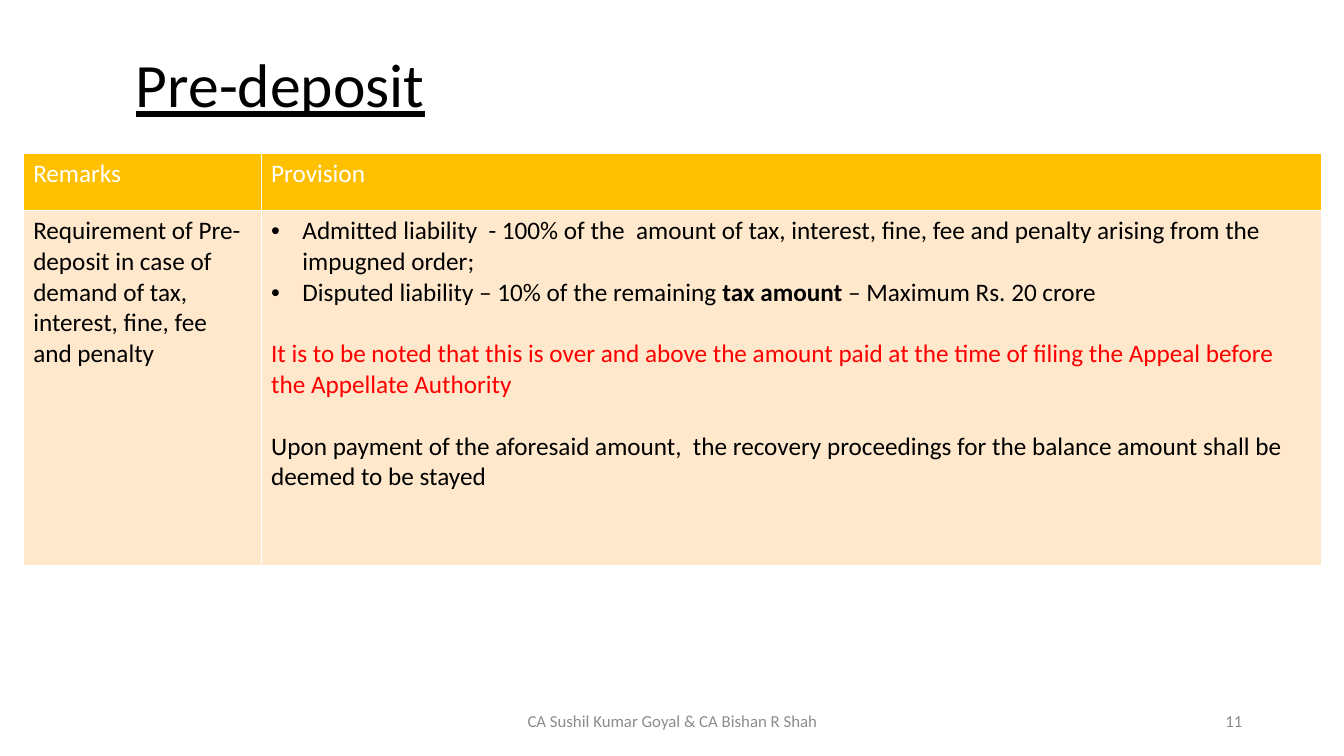
from lxml import etree
from pptx import Presentation
from pptx.dml.color import RGBColor
from pptx.enum.text import MSO_ANCHOR, PP_ALIGN
from pptx.oxml.ns import qn
from pptx.util import Inches, Pt

MIDDLE = MSO_ANCHOR.MIDDLE
LEFT, CENTER, RIGHT = PP_ALIGN.LEFT, PP_ALIGN.CENTER, PP_ALIGN.RIGHT

BLACK, WHITE, RED, GRAY = "000000", "FFFFFF", "FF0000", "8C8C8C"
AMBER, CREAM = "FFC000", "FFE8CC"
BLANK_LINE = 22  # points, one line of 18 pt text


def rgb(value):
    return RGBColor.from_string(value)


class SlideBuilder:
    font = "Calibri"
    body_size = 18

    def __init__(self, slide):
        self.s = slide

    def style(self, p, size, color):
        p.font.name = self.font
        p.font.size = Pt(size)
        p.font.color.rgb = rgb(color)

    def text(self, box, text, size, color, align=LEFT):
        tf = self.s.shapes.add_textbox(*map(Inches, box)).text_frame
        tf.word_wrap = True
        tf.vertical_anchor = MIDDLE
        p = tf.paragraphs[0]
        p.text = text
        p.alignment = align
        self.style(p, size, color)
        return p

    def table(self, box, widths, heights):
        shape = self.s.shapes.add_table(len(heights), len(widths), *map(Inches, box))
        table = shape.table
        for column, width in zip(table.columns, widths):
            column.width = Inches(width)
        for row, height in zip(table.rows, heights):
            row.height = Inches(height)
        return table

    def cell(self, cell, fill, paragraphs):
        self.borders(cell, WHITE, 1)
        cell.fill.solid()
        cell.fill.fore_color.rgb = rgb(fill)
        tf = cell.text_frame
        for i, (runs, color, bullet, before) in enumerate(paragraphs):
            p = tf.add_paragraph() if i else tf.paragraphs[0]
            self.style(p, self.body_size, color)
            p.space_before = Pt(before)
            for text, bold in runs:
                r = p.add_run()
                r.text = text
                r.font.bold = bold
            if bullet:
                self.bullet(p)

    def borders(self, cell, color, width):
        tcPr = cell._tc.get_or_add_tcPr()
        for side in ("lnL", "lnR", "lnT", "lnB"):
            ln = etree.SubElement(tcPr, qn("a:" + side), w=str(Pt(width)))
            fill = etree.SubElement(ln, qn("a:solidFill"))
            etree.SubElement(fill, qn("a:srgbClr"), val=color)

    def bullet(self, p):
        pPr = p._p.get_or_add_pPr()
        indent = Inches(0.31)
        pPr.set("marL", str(indent))
        pPr.set("indent", str(-indent))
        font = etree.Element(qn("a:buFont"), typeface="Arial")
        char = etree.Element(qn("a:buChar"), char="•")
        pPr.find(qn("a:defRPr")).addprevious(font)
        font.addnext(char)


def plain(text, color=BLACK, before=0):
    return [(text, False)], color, False, before


def main():
    prs = Presentation()
    prs.slide_width, prs.slide_height = Inches(13.33), Inches(7.5)
    b = SlideBuilder(prs.slides.add_slide(prs.slide_layouts[6]))

    # Title
    title = b.text((1.25, 0.22, 10.24, 1.3), "Pre-deposit", 44, BLACK)
    title.font.underline = True
    title.line_spacing = 0.9

    # Table
    table = b.table((0.23, 1.52, 12.88, 4.09), (2.36, 10.52), (0.57, 3.52))
    for col, heading in enumerate(("Remarks", "Provision")):
        b.cell(table.cell(0, col), AMBER, [plain(heading, WHITE)])
    b.cell(table.cell(1, 0), CREAM, [plain(
        "Requirement of Pre-deposit in case of demand of tax, interest, fine, fee and penalty")])
    b.cell(table.cell(1, 1), CREAM, [
        ([("Admitted liability  - 100% of the  amount of tax, interest, fine, fee and penalty "
           "arising from the impugned order;", False)], BLACK, True, 0),
        ([("Disputed liability – 10% of the remaining ", False), ("tax amount ", True),
          ("– Maximum Rs. 20 crore", False)], BLACK, True, 0),
        plain("It is to be noted that this is over and above the amount paid at the time of "
              "filing the Appeal before the Appellate Authority", RED, BLANK_LINE),
        plain("Upon payment of the aforesaid amount,  the recovery proceedings for the balance "
              "amount shall be deemed to be stayed", BLACK, BLANK_LINE),
    ])

    # Footer and slide number
    b.text((4.42, 6.95, 4.5, 0.4), "CA Sushil Kumar Goyal & CA Bishan R Shah", 12, GRAY, CENTER)
    b.text((9.42, 6.95, 3, 0.4), "11", 12, GRAY, RIGHT)

    prs.save("out.pptx")


if __name__ == "__main__":
    main()
